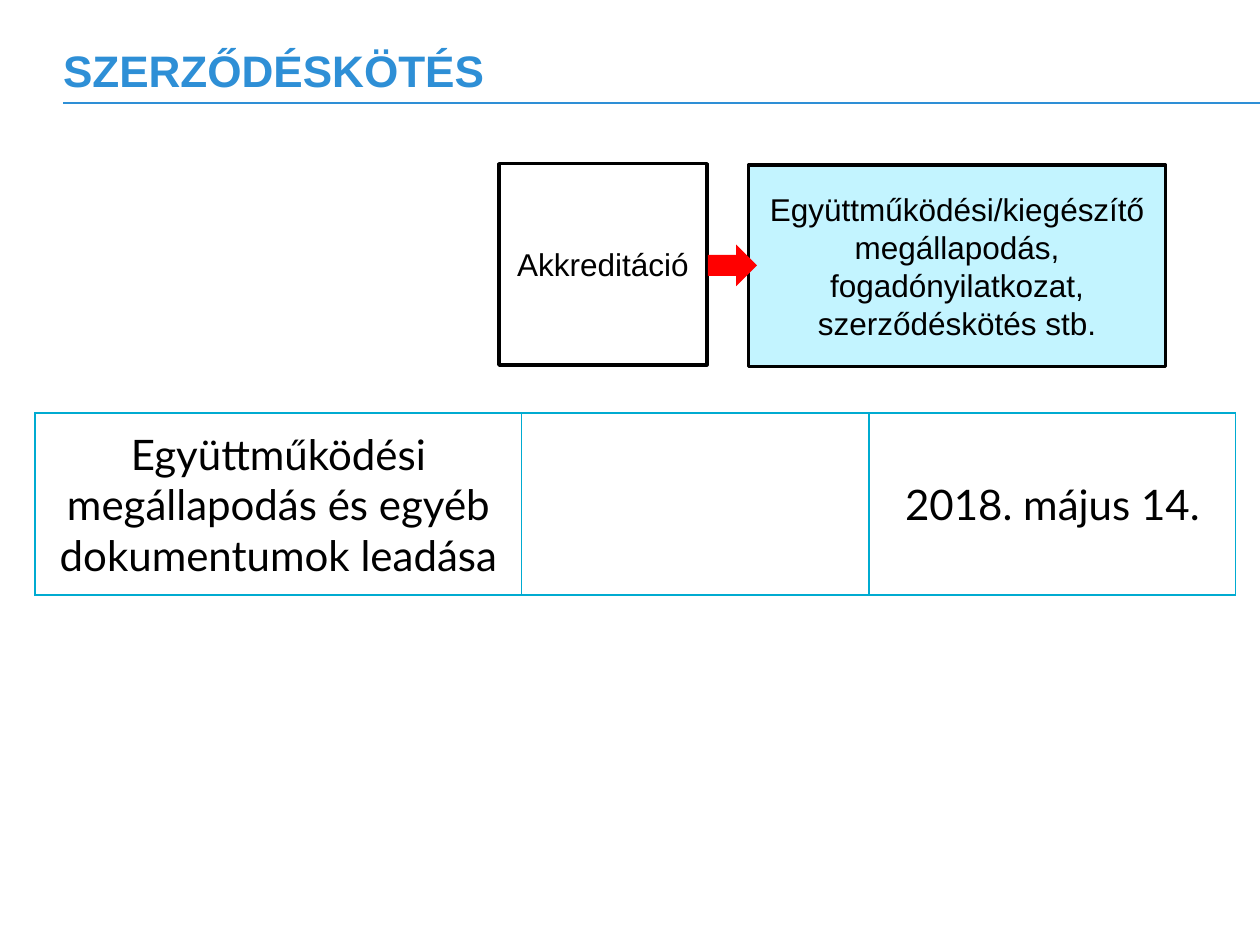
from dataclasses import dataclass

from lxml.etree import SubElement
from pptx import Presentation
from pptx.dml.color import RGBColor
from pptx.enum.shapes import MSO_CONNECTOR, MSO_SHAPE
from pptx.enum.text import MSO_ANCHOR, MSO_AUTO_SIZE, PP_ALIGN
from pptx.oxml import parse_xml
from pptx.oxml.ns import nsdecls, qn
from pptx.util import Cm, Pt


@dataclass(frozen=True)
class Theme:
    blue: str = "2E8FD6"
    border: str = "00ABD1"
    pale: str = "C3F4FF"
    white: str = "FFFFFF"
    black: str = "000000"
    red: str = "FF0000"
    title_size: float = 25.2
    box_size: int = 18
    table_size: int = 24


theme = Theme()


def format_text(paragraph, alignment, color, **font_values):
    paragraph.alignment = alignment
    paragraph.font.color.rgb = RGBColor.from_string(color)
    for name, value in font_values.items():
        setattr(paragraph.font, name, value)


def add_filled_shape(kind, position, fill):
    shape = slide.shapes.add_shape(kind, *map(Cm, position))
    shape.shadow.inherit = False
    shape.fill.solid()
    shape.fill.fore_color.rgb = RGBColor.from_string(fill)
    return shape


presentation = Presentation()
presentation.slide_width, presentation.slide_height = Cm(25.4), Cm(19.05)
slide = presentation.slides.add_slide(presentation.slide_layouts[5])

# Title and rule
title = slide.shapes.title
title.left, title.top, title.width, title.height = map(Cm, (1.27, 1.02, 22.86, 0.79))
title.text = "SZERZŐDÉSKÖTÉS"
frame_values = dict(margin_left=0, margin_top=0, margin_right=0, margin_bottom=0,
                    vertical_anchor=MSO_ANCHOR.MIDDLE, auto_size=MSO_AUTO_SIZE.NONE)
for name, value in frame_values.items():
    setattr(title.text_frame, name, value)
format_text(title.text_frame.paragraphs[0], PP_ALIGN.LEFT, theme.blue,
            name="Arial", size=Pt(theme.title_size), bold=True)

rule = slide.shapes.add_connector(MSO_CONNECTOR.STRAIGHT, Cm(1.27), Cm(2.08), Cm(25.4), Cm(2.08))
rule.line.color.rgb = RGBColor.from_string(theme.blue)
rule.line.width = Pt(1.5)
SubElement(rule._element.spPr, qn("a:effectLst"))

# Process steps
steps = [
    ("Akkreditáció", (10.06, 3.3, 4.19, 4.06), theme.white),
    ("Együttműködési/kiegészítő megállapodás, fogadónyilatkozat, szerződéskötés stb.",
     (15.09, 3.33, 8.41, 4.06), theme.pale),
]
for text, position, fill in steps:
    box = add_filled_shape(MSO_SHAPE.RECTANGLE, position, fill)
    box.line.color.rgb = RGBColor.from_string(theme.black)
    box.line.width = Pt(2)
    box.text_frame.word_wrap = True
    box.text_frame.vertical_anchor = MSO_ANCHOR.MIDDLE
    box.text_frame.text = text
    format_text(box.text_frame.paragraphs[0], PP_ALIGN.CENTER, theme.black,
                name="Arial", size=Pt(theme.box_size))

arrow = add_filled_shape(MSO_SHAPE.RIGHT_ARROW, (14.27, 4.93, 0.99, 0.84), theme.red)
arrow.line.fill.background()

# Deadline table
cell_texts = ["Együttműködési megállapodás és egyéb dokumentumok leadása", "", "2018. május 14."]
column_widths = [9.8, 7.01, 7.39]
table = slide.shapes.add_table(1, len(cell_texts), Cm(0.71), Cm(8.33),
                               Cm(sum(column_widths)), Cm(3.66)).table
table.first_row = table.horz_banding = False
cell_values = dict(margin_left=Cm(0.03), margin_top=Cm(0.03), margin_right=Cm(0.03),
                   margin_bottom=0, vertical_anchor=MSO_ANCHOR.MIDDLE)
for column, (text, width) in enumerate(zip(cell_texts, column_widths)):
    table.columns[column].width = Cm(width)
    cell = table.cell(0, column)
    cell.text = text
    for name, value in cell_values.items():
        setattr(cell, name, value)
    format_text(cell.text_frame.paragraphs[0], PP_ALIGN.CENTER, theme.black,
                name="Lato", size=Pt(theme.table_size))
    cell_properties = cell._tc.get_or_add_tcPr()
    for side in ("lnL", "lnR", "lnT", "lnB"):
        cell_properties.append(parse_xml(
            f'<a:{side} {nsdecls("a")} w="{Pt(1)}"><a:solidFill>'
            f'<a:srgbClr val="{theme.border}"/></a:solidFill></a:{side}>'))
    cell.fill.solid()
    cell.fill.fore_color.rgb = RGBColor.from_string(theme.white)

presentation.save("out.pptx")
